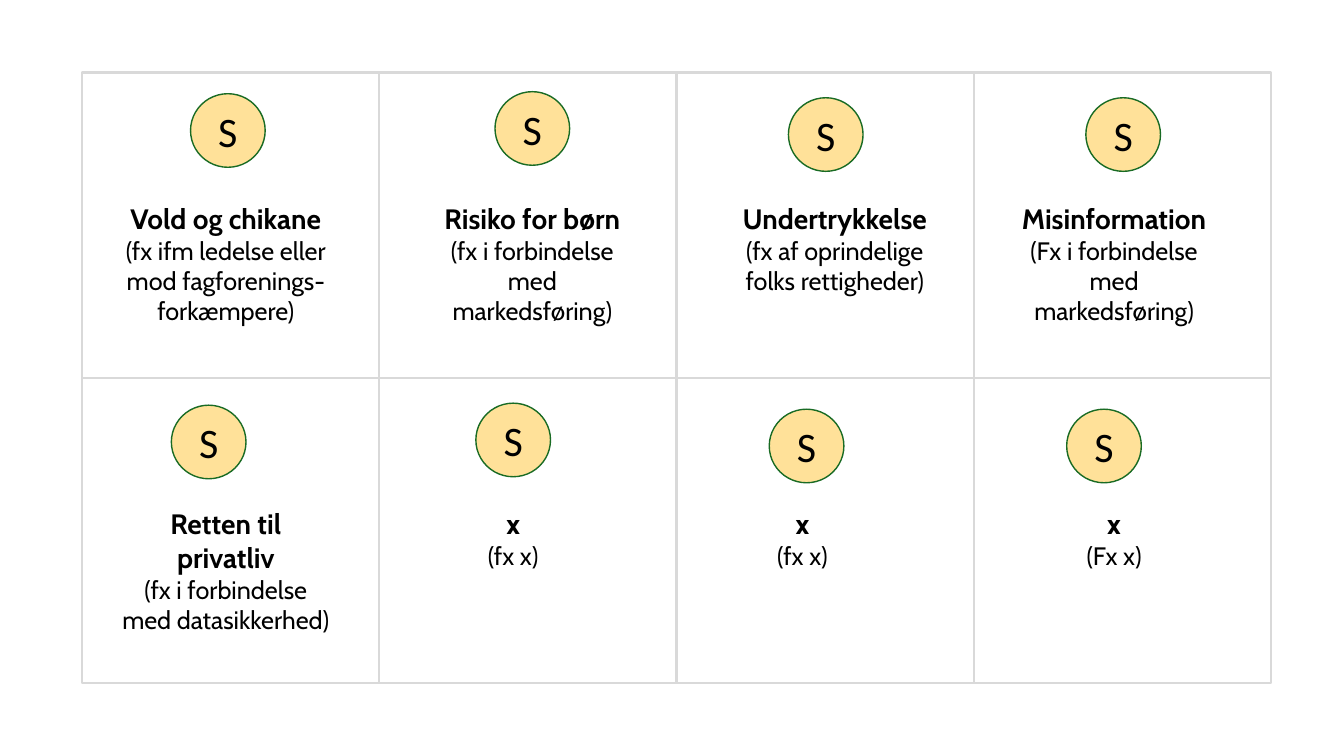
from pptx import Presentation, util as u
from pptx.dml.color import RGBColor
from pptx.enum import shapes, text

PX = 9144
SLIDE_WIDTH, SLIDE_HEIGHT = 1333, 750
GRID_LEFT, GRID_TOP = 81, 72
CELL_WIDTH, CELL_HEIGHT = 295, 303
COLUMNS = 4
BADGE_WIDTH, BADGE_HEIGHT = 74, 73
CAPTION_WIDTH, CAPTION_TOP = 226, 123

BLACK = RGBColor(0x00, 0x00, 0x00)
GRID_GREY = RGBColor(0xD9, 0xD9, 0xD9)
BADGE_YELLOW = RGBColor(0xFF, 0xE1, 0x99)
BADGE_GREEN = RGBColor(0x19, 0x6B, 0x24)

HEADING_FONT = {"name": "Cabin", "size": u.Pt(20), "bold": True}
EXAMPLE_FONT = {"name": "Cabin", "size": u.Pt(18), "bold": False}
BADGE_FONT = {"name": "Calibri", "size": u.Pt(30), "bold": False}
BADGE_FRAME = {
    "margin_left": 0, "margin_right": 0, "margin_top": 0, "margin_bottom": 0,
    "vertical_anchor": text.MSO_ANCHOR.MIDDLE, "word_wrap": True,
}
CAPTION_FRAME = {"word_wrap": True, "auto_size": text.MSO_AUTO_SIZE.SHAPE_TO_FIT_TEXT}

BADGE_OFFSETS = [(108, 21), (115, 19), (111, 25), (111, 25)]
BADGE_ROW_SHIFTS = [(0, 0), (-19, 6)]

RISKS = [
    ("Vold og chikane", "(fx ifm ledelse eller mod fagforenings-forkæmpere)", 30, 165),
    ("Risiko for børn", "(fx i forbindelse med markedsføring)", 39, 135),
    ("Undertrykkelse", "(fx af oprindelige folks rettigheder)", 44, 104),
    ("Misinformation", "(Fx i forbindelse med markedsføring)", 26, 135),
    ("Retten til privatliv", "(fx i forbindelse med datasikkerhed)", 30, 199),
    ("x", "(fx x)", 20, 74),
    ("x", "(fx x)", 12, 74),
    ("x", "(Fx x)", 26, 74),
]


def scaled(*lengths):
    return [u.Emu(length * PX) for length in lengths]


def apply_format(target, values):
    for name, value in values.items():
        setattr(target, name, value)


def write_paragraph(paragraph, words, font_format):
    paragraph.alignment = text.PP_ALIGN.CENTER
    run = paragraph.add_run()
    run.text = words
    apply_format(run.font, font_format)
    run.font.color.rgb = BLACK


def add_outlined_shape(slide, kind, box, line_color, line_width):
    shape = slide.shapes.add_shape(kind, *scaled(*box))
    shape.shadow.inherit = False
    shape.line.color.rgb = line_color
    shape.line.width = u.Pt(line_width)
    return shape


def add_cell(slide, box):
    cell = add_outlined_shape(slide, shapes.MSO_SHAPE.RECTANGLE, box, GRID_GREY, 1.5)
    cell.fill.background()


def add_caption(slide, box, heading, example):
    frame = slide.shapes.add_textbox(*scaled(*box)).text_frame
    apply_format(frame, CAPTION_FRAME)
    write_paragraph(frame.paragraphs[0], heading, HEADING_FONT)
    write_paragraph(frame.add_paragraph(), example, EXAMPLE_FONT)


def add_badge(slide, box):
    badge = add_outlined_shape(slide, shapes.MSO_SHAPE.OVAL, box, BADGE_GREEN, 1)
    badge.fill.solid()
    badge.fill.fore_color.rgb = BADGE_YELLOW
    apply_format(badge.text_frame, BADGE_FRAME)
    write_paragraph(badge.text_frame.paragraphs[0], "S", BADGE_FONT)


def add_risk_grid(slide, left, top):
    for index, (heading, example, caption_left, caption_height) in enumerate(RISKS):
        row, column = divmod(index, COLUMNS)
        cell_left = left + column * CELL_WIDTH
        cell_top = top + row * CELL_HEIGHT
        badge_left, badge_top = BADGE_OFFSETS[column]
        shift_x, shift_y = BADGE_ROW_SHIFTS[row]
        add_cell(slide, (cell_left, cell_top, CELL_WIDTH, CELL_HEIGHT))
        add_caption(
            slide,
            (cell_left + caption_left, cell_top + CAPTION_TOP, CAPTION_WIDTH, caption_height),
            heading, example,
        )
        add_badge(
            slide,
            (cell_left + badge_left + shift_x, cell_top + badge_top + shift_y,
             BADGE_WIDTH, BADGE_HEIGHT),
        )


def main():
    presentation = Presentation()
    presentation.slide_width, presentation.slide_height = scaled(SLIDE_WIDTH, SLIDE_HEIGHT)
    slide = presentation.slides.add_slide(presentation.slide_layouts[6])
    add_risk_grid(slide, GRID_LEFT, GRID_TOP)
    presentation.save("out.pptx")


if __name__ == "__main__":
    main()
